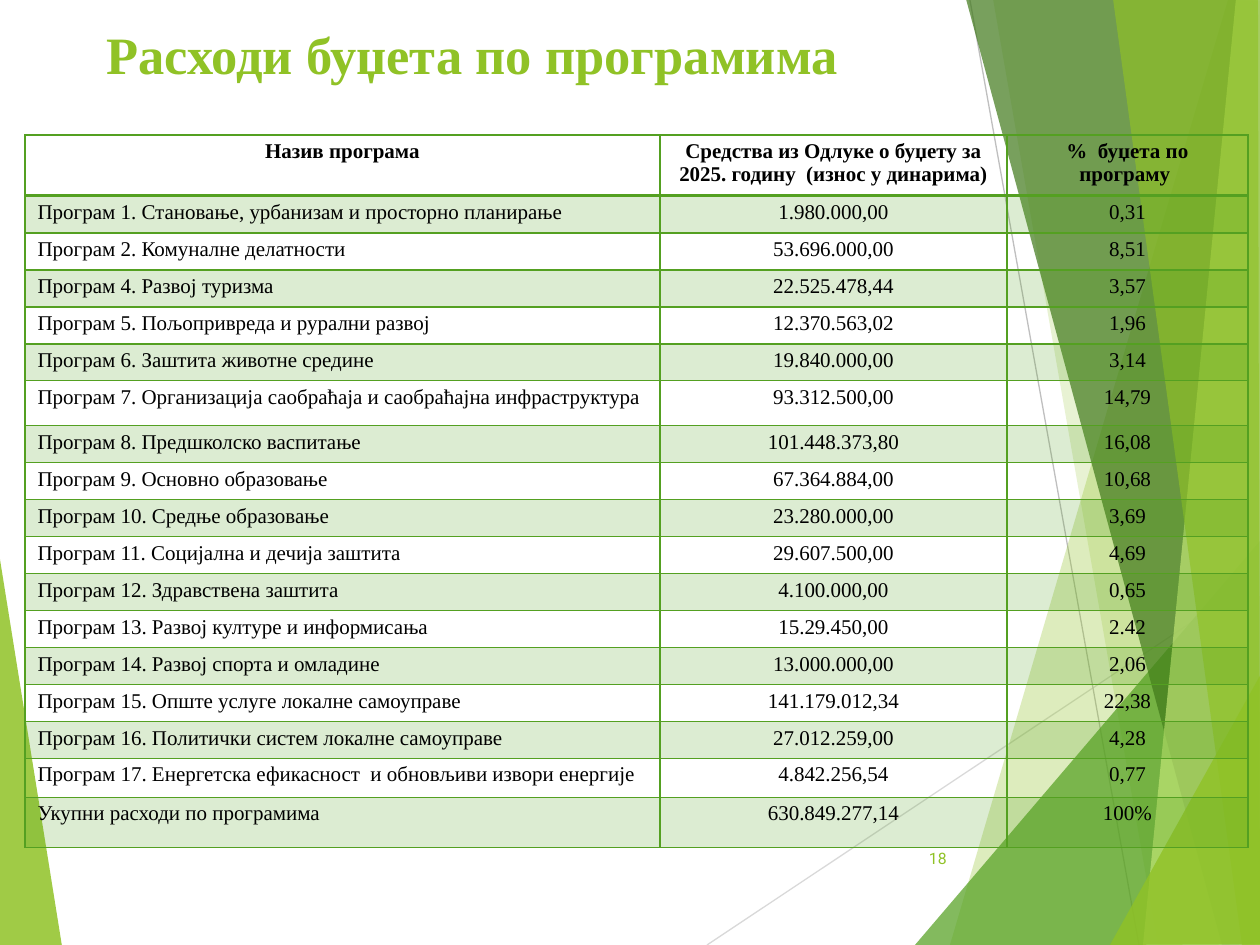
from lxml.etree import SubElement
from pptx import Presentation
from pptx.dml.color import RGBColor
from pptx.enum.shapes import MSO_CONNECTOR
from pptx.enum.text import MSO_ANCHOR, PP_ALIGN
from pptx.oxml.ns import qn
from pptx.util import Emu, Inches, Pt

WIDTH, HEIGHT = 1260, 945
SCALE = Inches(10) / WIDTH
SERIF = "Times New Roman"
NO_STYLE = "{2D5ABB26-0587-4C30-8999-92F81FD0307C}"
COLORS = {
    "lime": "90C226", "green": "54A021", "forest": "3F7819", "pale": "C0E474",
    "silver": "BFBFBF", "mist": "D9D9D9", "black": "000000",
}
RAYS = [((707, 945), (1261, 576), "mist"), ((970, 0), (1139, 945), "silver")]
FACETS = [
    ("lime", 85, [(-1, 553), (62, 946), (-1, 945)]),
    ("lime", 30, [(1228, 0), (950, 945), (1262, 946), (1261, 1)]),
    ("lime", 20, [(993, -1), (1158, 945), (1261, 945), (1261, -1)]),
    ("green", 72, [(915, 945), (1260, 541), (1261, 945)]),
    ("forest", 70, [(966, -1), (1222, 945), (1261, 944), (1261, -1)]),
    ("pale", 70, [(1236, -1), (1143, 945), (1261, 945), (1260, -1)]),
    ("lime", 65, [(1113, -1), (1242, 945), (1260, 945), (1258, -1)]),
    ("lime", 80, [(1110, 945), (1261, 674), (1261, 944)]),
]
COLUMNS = [635, 347, 241]
ROW_HEIGHTS = [61] + [37] * 5 + [45] + [37] * 9 + [39, 50]
CELL_MARGINS = {"margin_top": 5, "margin_bottom": 4}
PROGRAMS = [
    ("Назив програма", "Средства из Одлуке о буџету за 2025. годину  (износ у динарима)",
     "%  буџета по програму "),
    ("Програм 1. Становање, урбанизам и просторно планирање", "1.980.000,00", "0,31"),
    ("Програм 2. Комуналне делатности", "53.696.000,00", "8,51"),
    ("Програм 4. Развој туризма", "22.525.478,44", "3,57"),
    ("Програм 5. Пољопривреда и рурални развој", "12.370.563,02", "1,96"),
    ("Програм 6. Заштита животне средине", "19.840.000,00", "3,14"),
    ("Програм 7. Организација саобраћаја и саобраћајна инфраструктура", "93.312.500,00", "14,79"),
    ("Програм 8. Предшколско васпитање", "101.448.373,80", "16,08"),
    ("Програм 9. Основно образовањe", "67.364.884,00", "10,68"),
    ("Програм 10. Средње образовање", "23.280.000,00", "3,69"),
    ("Програм 11. Социјална и дечија заштита", "29.607.500,00", "4,69"),
    ("Програм 12. Здравствена заштита", "4.100.000,00", "0,65"),
    ("Програм 13. Развој културе и информисања", "15.29.450,00", "2.42"),
    ("Програм 14. Развој спорта и омладине", "13.000.000,00", "2,06"),
    ("Програм 15. Опште услуге локалне самоуправе", "141.179.012,34", "22,38"),
    ("Програм 16. Политички систем локалне самоуправе", "27.012.259,00", "4,28"),
    ("Програм 17. Енергетска ефикасност  и обновљиви извори енергије", "4.842.256,54", "0,77"),
    ("Укупни расходи по програмима", "630.849.277,14", "100%"),
]


def px(length):
    """Turn pixels into EMU."""
    return Emu(round(length * SCALE))


def rgb(color):
    """Look up a named colour."""
    return RGBColor.from_string(COLORS[color])


def fill_solid(fill, properties, color, opacity):
    """Apply a solid fill with an opacity in percent."""
    fill.solid()
    fill.fore_color.rgb = rgb(color)
    value = properties.find(qn("a:solidFill"))[0]
    SubElement(value, qn("a:alpha"), val=str(opacity * 1000))


def write_text(frame, text, color, alignment=PP_ALIGN.LEFT, **font_format):
    """Write one formatted paragraph into a text frame."""
    paragraph = frame.paragraphs[0]
    paragraph.alignment = alignment
    run = paragraph.add_run()
    run.text = text
    run.font.color.rgb = rgb(color)
    for name, value in font_format.items():
        setattr(run.font, name, value)


def add_label(slide, box, anchor, text, **text_format):
    """Place a wrapped text box."""
    frame = slide.shapes.add_textbox(*map(px, box)).text_frame
    frame.word_wrap = True
    frame.vertical_anchor = anchor
    write_text(frame, text, **text_format)


def add_rays(slide, box):
    """Draw the thin background lines from the corner of the box."""
    left, top = box[:2]
    for start, end, color in RAYS:
        ends = [px(left + start[0]), px(top + start[1]), px(left + end[0]), px(top + end[1])]
        connector = slide.shapes.add_connector(MSO_CONNECTOR.STRAIGHT, *ends)
        connector.line.color.rgb = rgb(color)
        connector.line.width = Pt(0.75)
        SubElement(connector._element.spPr, qn("a:effectLst"))


def add_facets(slide, box):
    """Draw the translucent background facets from the corner of the box."""
    left, top = box[:2]
    for color, opacity, points in FACETS:
        builder = slide.shapes.build_freeform(*points[0], scale=SCALE)
        builder.add_line_segments(points[1:], close=True)
        shape = builder.convert_to_shape(px(left), px(top))
        shape.shadow.inherit = False
        shape.line.fill.background()
        fill_solid(shape.fill, shape._element.spPr, color, opacity)


def add_borders(cell, widths):
    """Give a cell green borders, with widths in points by side."""
    properties = cell._tc.get_or_add_tcPr()
    for side, width in widths.items():
        line = SubElement(properties, qn(f"a:ln{side}"), w=str(Pt(width)))
        solid = SubElement(line, qn("a:solidFill"))
        SubElement(solid, qn("a:srgbClr"), val=COLORS["green"])


def add_program_table(slide, box):
    """Build the table of spending by programme inside the box."""
    frame = slide.shapes.add_table(len(PROGRAMS), len(COLUMNS), *map(px, box))
    table = frame.table
    table._tbl.tblPr[0].text = NO_STYLE
    table.first_row = table.horz_banding = False
    for column, width in zip(table.columns, COLUMNS):
        column.width = px(width)
    for row_index, (height, texts) in enumerate(zip(ROW_HEIGHTS, PROGRAMS)):
        table.rows[row_index].height = px(height)
        header = row_index == 0
        widths = {"L": 1, "R": 1, "T": 2 if row_index == 1 else 1, "B": 2 if header else 1}
        for column_index, text in enumerate(texts):
            cell = table.cell(row_index, column_index)
            for name, margin in CELL_MARGINS.items():
                setattr(cell, name, px(margin))
            centered = header or column_index > 0
            write_text(cell.text_frame, text, "black",
                       PP_ALIGN.CENTER if centered else PP_ALIGN.LEFT,
                       name=SERIF, size=Pt(12), bold=header)
            add_borders(cell, widths)
            if row_index % 2:
                fill_solid(cell.fill, cell._tc.tcPr, "green", 20)
            else:
                cell.fill.background()


def main():
    """Build and save the slide."""
    presentation = Presentation()
    presentation.slide_width, presentation.slide_height = px(WIDTH), px(HEIGHT)
    slide = presentation.slides.add_slide(presentation.slide_layouts[6])
    page = (0, 0, WIDTH, HEIGHT)
    add_rays(slide, page)
    add_facets(slide, page)
    add_label(slide, (94, 16, 1074, 107), MSO_ANCHOR.TOP, "Расходи буџета по програмима",
              color="lime", name=SERIF, size=Pt(30), bold=True)
    add_label(slide, (888, 833, 71, 50), MSO_ANCHOR.MIDDLE, "18",
              color="lime", alignment=PP_ALIGN.RIGHT, name="Roboto", size=Pt(9))
    add_program_table(slide, (25, 135, sum(COLUMNS), sum(ROW_HEIGHTS)))
    presentation.save("out.pptx")


if __name__ == "__main__":
    main()
